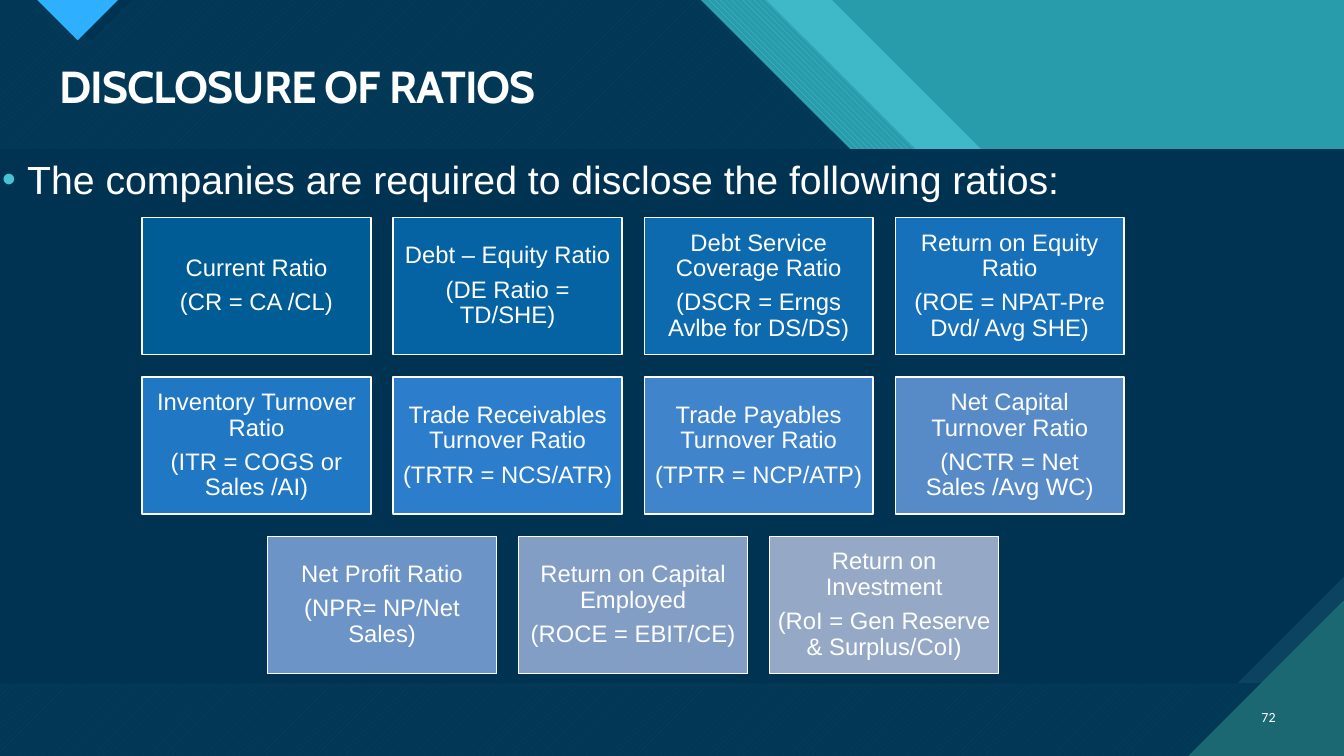
from dataclasses import dataclass

from lxml.etree import SubElement
from pptx import Presentation
from pptx.dml.color import RGBColor
from pptx.enum.dml import MSO_PATTERN
from pptx.enum.shapes import MSO_SHAPE
from pptx.enum.text import MSO_ANCHOR, MSO_AUTO_SIZE, PP_ALIGN
from pptx.oxml.ns import qn
from pptx.util import Inches, Pt

TITLE = "DISCLOSURE OF RATIOS"
INTRO = "The companies are required to disclose the following ratios:"
PAGE_NUMBER = "72"
RATIO_ROWS = [
    [
        ("Current Ratio", "(CR = CA /CL)", "005C95"),
        ("Debt – Equity Ratio", "(DE Ratio = TD/SHE)", "0663A3"),
        ("Debt Service Coverage Ratio", "(DSCR = Erngs Avlbe for DS/DS)", "0D6AAF"),
        ("Return on Equity Ratio", "(ROE = NPAT-Pre Dvd/ Avg SHE)", "1670BA"),
    ],
    [
        ("Inventory Turnover Ratio", "(ITR = COGS or Sales /AI)", "2077C4"),
        ("Trade Receivables Turnover Ratio", "(TRTR = NCS/ATR)", "2C7DCC"),
        ("Trade Payables Turnover Ratio", "(TPTR = NCP/ATP)", "4084CC"),
        ("Net Capital Turnover Ratio", "(NCTR = Net Sales /Avg WC)", "578BC8"),
    ],
    [
        ("Net Profit Ratio", "(NPR= NP/Net Sales)", "6D94C6"),
        ("Return on Capital Employed", "(ROCE = EBIT/CE)", "829EC5"),
        ("Return on Investment", "(RoI = Gen Reserve & Surplus/CoI)", "95A8C5"),
    ],
]


@dataclass(frozen=True)
class Theme:
    white: str = "FFFFFF"
    navy: str = "003352"
    slate: str = "0C4360"
    sky: str = "2FAFFF"
    aqua: str = "47C3D3"
    teal: str = "299CAB"
    pine: str = "1B6872"
    heading: str = "Cabin"
    text: str = "Arial"
    number: str = "Calibri"
    title_size: int = 32
    intro_size: int = 28
    card_size: int = 17
    number_size: int = 10


THEME = Theme()
WIDTH, HEIGHT = 13.33, 7.5
PANEL_TOP, PANEL_HEIGHT = 1.48, 5.3
SHELF = 2.97
CORNER = 1.54
CARD_WIDTH, CARD_HEIGHT = 2.27, 1.36
GAP = 0.22
GRID_TOP, GRID_CENTER = 2.16, 6.28

# Left, top, width and height as percentages of the slide
TITLE_AREA = (3.68, 7.87, 91.97, 7.87)
INTRO_AREA = (-0.6, 20.53, 94.52, 76.8)
NUMBER_AREA = (92.35, 92.13, 3.3, 5.33)


def slide_share(area):
    sides = (WIDTH, HEIGHT, WIDTH, HEIGHT)
    return [Inches(side * part / 100) for side, part in zip(sides, area)]


def place(shape, area):
    shape.left, shape.top, shape.width, shape.height = slide_share(area)


def paint(shape, color, back=None, pattern=None, opacity=100, outline=None):
    shape.shadow.inherit = False
    if pattern is None:
        shape.fill.solid()
        shape.fill.fore_color.rgb = RGBColor.from_string(color)
    else:
        shape.fill.patterned()
        shape.fill.pattern = pattern
        shape.fill.fore_color.rgb = RGBColor.from_string(color)
        shape.fill.back_color.rgb = RGBColor.from_string(back)
    if opacity < 100:
        tint = shape.element.spPr.find(".//" + qn("a:srgbClr"))
        SubElement(tint, qn("a:alpha"), val=str(opacity * 1000))
    if outline:
        shape.line.color.rgb = RGBColor.from_string(outline)
        shape.line.width = Pt(1)
    else:
        shape.line.fill.background()


def polygon(page, points, color, **look):
    corners = [(Inches(x), Inches(y)) for x, y in points]
    builder = page.shapes.build_freeform(*corners[0], scale=1.0)
    builder.add_line_segments(corners[1:], close=True)
    paint(builder.convert_to_shape(), color, **look)


def ramp(edge, shelf_end):
    """Outline left of a 45 degree edge, with a shelf and a second slope."""
    return [(0, 0), (edge, 0), (edge + SHELF, SHELF), (shelf_end, SHELF),
            (WIDTH, SHELF + WIDTH - shelf_end), (WIDTH, HEIGHT), (0, HEIGHT)]


def write(frame, lines, size, font, align=PP_ALIGN.LEFT, anchor=MSO_ANCHOR.TOP,
          margin=None, bold=False, before=0, after=0, spacing=0.9):
    frame.word_wrap = True
    frame.auto_size = MSO_AUTO_SIZE.NONE
    frame.vertical_anchor = anchor
    if margin is not None:
        frame.margin_left = frame.margin_right = Inches(margin)
        frame.margin_top = frame.margin_bottom = Inches(margin)
    for index, line in enumerate(lines):
        para = frame.add_paragraph() if index else frame.paragraphs[0]
        para.alignment = align
        para.line_spacing = spacing
        para.space_before, para.space_after = Pt(before), Pt(after)
        span = para.add_run()
        span.text = line
        span.font.size = Pt(size)
        span.font.name = font
        span.font.bold = bold
        span.font.color.rgb = RGBColor.from_string(THEME.white)


def add_bullet(para, color, indent):
    props = para._p.get_or_add_pPr()
    props.set("marL", str(Inches(indent)))
    props.set("indent", str(-Inches(indent)))
    tint = SubElement(props, qn("a:buClr"))
    SubElement(tint, qn("a:srgbClr"), val=color)
    SubElement(props, qn("a:buChar"), char="•")


def add_panel(page, snip, color, **look):
    panel = page.shapes.add_shape(
        MSO_SHAPE.SNIP_1_RECTANGLE, 0, Inches(PANEL_TOP),
        Inches(WIDTH), Inches(PANEL_HEIGHT))
    panel.adjustments[0] = snip
    panel.element.spPr.find(qn("a:xfrm")).set("flipV", "1")
    paint(panel, color, **look)


def add_backdrop(page):
    page.background.fill.solid()
    page.background.fill.fore_color.rgb = RGBColor.from_string(THEME.teal)
    polygon(page, ramp(8.25, 12.34), THEME.aqua, opacity=74)
    polygon(page, ramp(7.6, 11.84), THEME.aqua, back=THEME.teal,
            pattern=MSO_PATTERN.WIDE_DOWNWARD_DIAGONAL)
    navy_area = ramp(6.95, 11.18)
    polygon(page, navy_area, THEME.aqua, back=THEME.pine,
            pattern=MSO_PATTERN.WIDE_UPWARD_DIAGONAL)
    polygon(page, navy_area, THEME.navy, opacity=90)
    polygon(page, [(0.48, 0), (0.9, 0.41), (1.31, 0)], THEME.navy)
    polygon(page, [(0.37, 0), (0.77, 0.4), (1.17, 0)], THEME.sky,
            back=THEME.pine, pattern=MSO_PATTERN.DARK_HORIZONTAL)
    add_panel(page, 0, THEME.slate, back=THEME.pine,
              pattern=MSO_PATTERN.DARK_VERTICAL)
    add_panel(page, 0.2, THEME.navy)
    polygon(page, [(WIDTH - CORNER, HEIGHT), (WIDTH, HEIGHT),
                   (WIDTH, HEIGHT - CORNER)], THEME.pine,
            back=THEME.aqua, pattern=MSO_PATTERN.DARK_HORIZONTAL)


def add_ratio_cards(page):
    for row, ratios in enumerate(RATIO_ROWS):
        row_width = len(ratios) * (CARD_WIDTH + GAP) - GAP
        top = GRID_TOP + row * (CARD_HEIGHT + GAP)
        for column, (name, formula, color) in enumerate(ratios):
            left = GRID_CENTER - row_width / 2 + column * (CARD_WIDTH + GAP)
            card = page.shapes.add_shape(
                MSO_SHAPE.RECTANGLE, Inches(left), Inches(top),
                Inches(CARD_WIDTH), Inches(CARD_HEIGHT))
            paint(card, color, outline=THEME.white)
            write(card.text_frame, [name, formula], THEME.card_size, THEME.text,
                  align=PP_ALIGN.CENTER, anchor=MSO_ANCHOR.MIDDLE,
                  margin=0.07, after=6)


def main():
    deck = Presentation()
    deck.slide_width, deck.slide_height = Inches(WIDTH), Inches(HEIGHT)
    page = deck.slides.add_slide(deck.slide_layouts[1])
    add_backdrop(page)

    title, intro = page.placeholders
    for holder, area in ((title, TITLE_AREA), (intro, INTRO_AREA)):
        place(holder, area)
        holder.element.getparent().append(holder.element)
    write(title.text_frame, [TITLE], THEME.title_size, THEME.heading,
          anchor=MSO_ANCHOR.MIDDLE, bold=True)
    title.text_frame.paragraphs[0].runs[0].font._element.set("spc", "-70")
    write(intro.text_frame, [INTRO], THEME.intro_size, THEME.text, before=10)
    add_bullet(intro.text_frame.paragraphs[0], THEME.aqua, 0.25)

    number = page.shapes.add_textbox(*slide_share(NUMBER_AREA))
    write(number.text_frame, [PAGE_NUMBER], THEME.number_size, THEME.number,
          align=PP_ALIGN.RIGHT, anchor=MSO_ANCHOR.MIDDLE, spacing=1.0)
    add_ratio_cards(page)
    deck.save("out.pptx")


if __name__ == "__main__":
    main()
